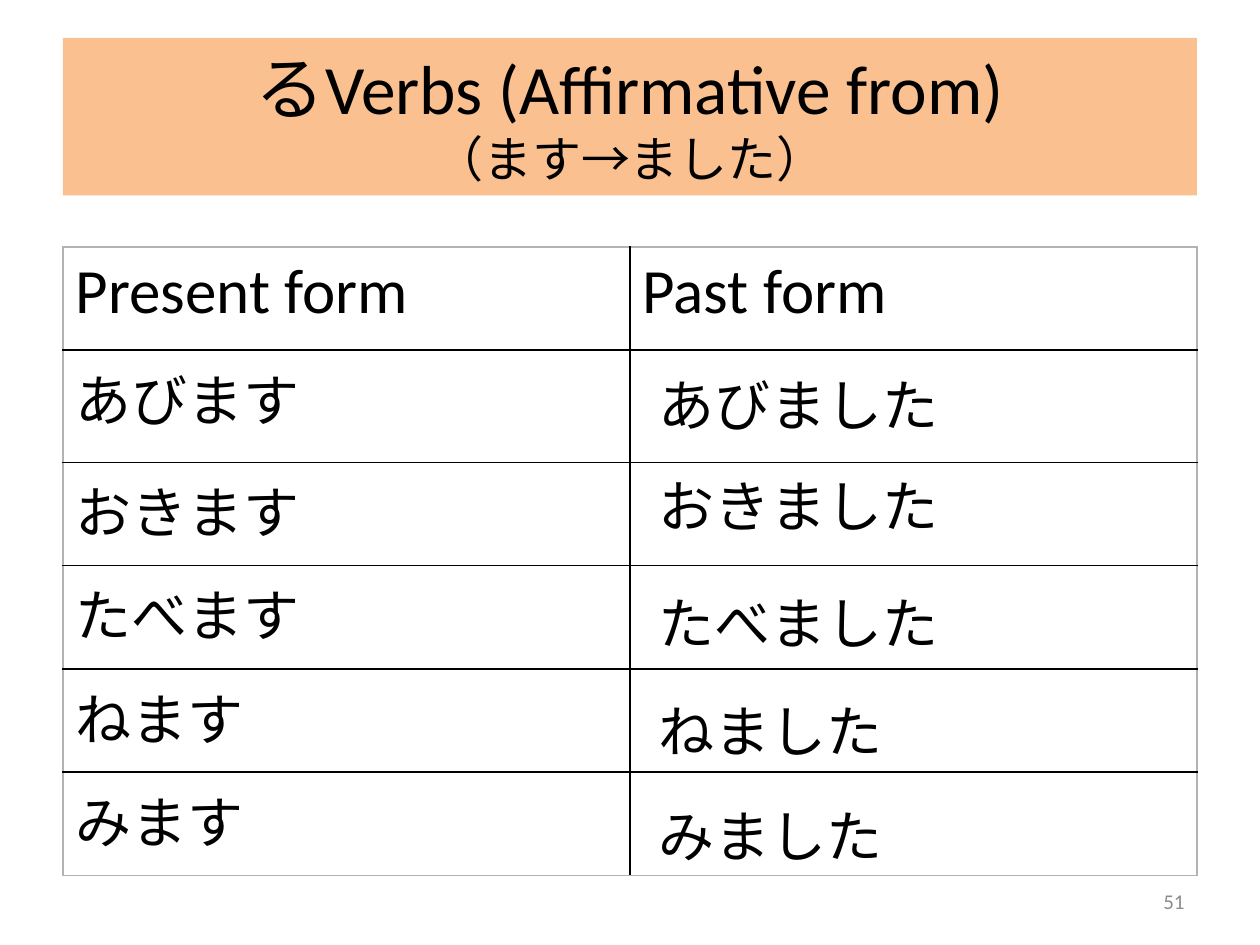
"""Build a slide of Japanese る verbs in present and past form."""
from lxml import etree
from pptx import Presentation
from pptx.dml.color import RGBColor
from pptx.enum.shapes import MSO_SHAPE
from pptx.enum.text import MSO_ANCHOR, PP_ALIGN
from pptx.oxml.ns import qn
from pptx.util import Inches, Pt

RECT = MSO_SHAPE.RECTANGLE
MIDDLE = MSO_ANCHOR.MIDDLE
CENTER, RIGHT = PP_ALIGN.CENTER, PP_ALIGN.RIGHT
LATIN, KANA = "Calibri", "Noto Sans CJK JP"
BLACK, GREY, EDGE, PEACH, WHITE = "000000", "8C8C8C", "B3B3B3", "FAC090", "FFFFFF"

TITLE = "るVerbs (Affirmative from)\v（ます→ました）"
TITLE_SIZES = (39.6, 28)
HEADS = ("Present form", "Past form")
VERBS = [
    ("あびます", "あびました", 2.89),
    ("おきます", "おきました", 3.69),
    ("たべます", "たべました", 4.62),
    ("ねます", "ねました", 5.48),
    ("みます", "みました", 6.31),
]
PAGE = "51"
LEFT, TOP, WIDTH = 0.5, 1.96, 9
HEIGHTS = (0.82, 0.89, 0.82, 0.82, 0.82, 0.82)


def color(code):
    return RGBColor.from_string(code)


def style(run, size, face=LATIN, code=BLACK):
    font = run.font
    font.size, font.name = Pt(size), face
    font.color.rgb = color(code)
    east = etree.SubElement(font._element, qn("a:ea"))
    east.set("typeface", KANA)


def add_text(slide, box, text, size, face=LATIN, code=BLACK):
    frame = slide.shapes.add_textbox(*map(Inches, box)).text_frame
    frame.word_wrap = True
    frame.text = text
    style(frame.paragraphs[0].runs[0], size, face, code)
    return frame


def add_title(slide):
    shape = slide.shapes.add_shape(RECT, *map(Inches, (LEFT, 0.3, WIDTH, 1.25)))
    shape.shadow.inherit = False
    shape.fill.solid()
    shape.fill.fore_color.rgb = color(PEACH)
    shape.line.fill.background()
    frame = shape.text_frame
    frame.vertical_anchor = MIDDLE
    frame.text = TITLE
    para = frame.paragraphs[0]
    para.alignment = CENTER
    for run, size in zip(para.runs, TITLE_SIZES):
        style(run, size)


def add_borders(cell, outer):
    props = cell._tc.get_or_add_tcPr()
    for i, side in enumerate(("lnL", "lnR", "lnT", "lnB")):
        line = etree.Element(qn("a:" + side), w=str(Pt(1)))
        fill = etree.SubElement(line, qn("a:solidFill"))
        etree.SubElement(fill, qn("a:srgbClr"), val=EDGE if outer[i] else BLACK)
        props.insert(i, line)


def add_grid(slide):
    rows = [HEADS] + [(verb[0], "") for verb in VERBS]
    box = (LEFT, TOP, WIDTH, sum(HEIGHTS))
    table = slide.shapes.add_table(len(rows), 2, *map(Inches, box)).table
    table.first_row = table.horz_banding = False
    for r, row in enumerate(rows):
        table.rows[r].height = Inches(HEIGHTS[r])
        size, face = (32, KANA) if r else (36, LATIN)
        for c, text in enumerate(row):
            cell = table.cell(r, c)
            cell.fill.solid()
            cell.fill.fore_color.rgb = color(WHITE)
            add_borders(cell, (c == 0, c == 1, r == 0, r == len(rows) - 1))
            if text:
                cell.text_frame.text = text
                style(cell.text_frame.paragraphs[0].runs[0], size, face)


def main():
    deck = Presentation()
    deck.slide_width, deck.slide_height = Inches(10), Inches(7.5)
    slide = deck.slides.add_slide(deck.slide_layouts[6])
    add_title(slide)
    page = add_text(slide, (7.17, 6.95, 2.33, 0.4), PAGE, 12, code=GREY)
    page.vertical_anchor = MIDDLE
    page.paragraphs[0].alignment = RIGHT
    add_grid(slide)
    for _, past, top in VERBS:
        add_text(slide, (5.13, top, 3.05, 0.64), past, 32, KANA)
    deck.save("out.pptx")


if __name__ == "__main__":
    main()
